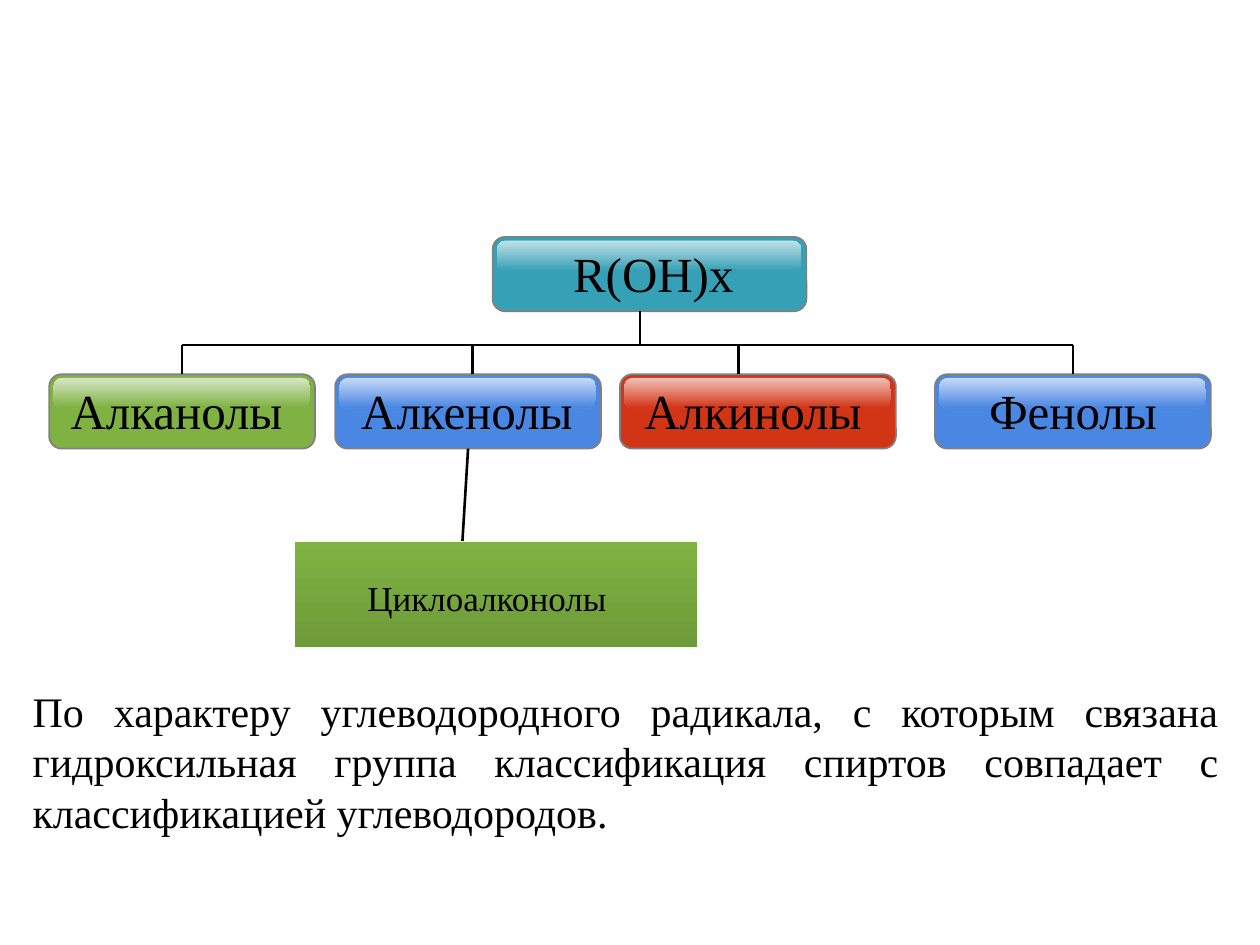
from dataclasses import dataclass

from lxml import etree
from pptx import Presentation, util as u
from pptx.dml.color import RGBColor
from pptx.enum import shapes, text
from pptx.oxml.ns import qn


@dataclass(frozen=True)
class Theme:
    font: str = "Times New Roman"
    node_size: int = 28
    sub_size: int = 20
    body_size: int = 24
    ink: str = "000000"
    white: str = "FFFFFF"
    border: str = "808080"
    teal: str = "36A1B6"
    green: str = "7FB242"
    dark_green: str = "6E9B39"
    blue: str = "4987E3"
    red: str = "D23516"
    gloss_opacity: int = 70


THEME = Theme()
WIDTH, HEIGHT = u.Inches(10), u.Inches(7.5)

# All positions are percent of the slide's width (x) or height (y).
ROOT_TOP, CLASS_TOP, NODE_HEIGHT = 25.07, 39.6, 7.87
BUS_Y, SUB_TOP, SUB_HEIGHT = 36.5, 57.33, 11.2
LABEL_HEIGHT = 7.6

# label, colour, left, width, label left, label width, drop x (None: node centre)
CLASSES = [
    ("Алканолы", THEME.green, 3.9, 21.1, 3.9, 20.2, None),
    ("Алкенолы", THEME.blue, 26.6, 21.1, 27.3, 19.5, 37.5),
    ("Алкинолы", THEME.red, 49.2, 21.9, 49.2, 21.1, 58.6),
    ("Фенолы", THEME.blue, 74.2, 21.9, 75.0, 20.3, None),
]
SUMMARY = ("По характеру углеводородного радикала, с которым связана "
           "гидроксильная группа классификация спиртов совпадает с "
           "классификацией углеводородов.")


def across(share):
    return round(WIDTH * share / 100)


def down(share):
    return round(HEIGHT * share / 100)


def area(left, top, width, height):
    return across(left), down(top), across(width), down(height)


def rgb(value):
    return RGBColor.from_string(value)


def add_block(slide, kind, box, corner=None):
    block = slide.shapes.add_shape(kind, *area(*box))
    block.shadow.inherit = False
    if corner is not None:
        block.adjustments[0] = corner
    return block


def fade_down(block, top_colour, bottom_colour, opacity=None):
    """Fill from top to bottom, with an optional opacity in percent."""
    block.fill.gradient()
    block.fill.gradient_angle = 270
    for stop, colour in zip(block.fill.gradient_stops, (top_colour, bottom_colour)):
        stop.color.rgb = rgb(colour)
    if opacity is not None:
        for colour in block.element.spPr.iter(qn("a:srgbClr")):
            etree.SubElement(colour, qn("a:alpha")).set("val", str(opacity * 1000))


def add_text(slide, content, box, size, align=text.PP_ALIGN.CENTER):
    frame = slide.shapes.add_textbox(*area(*box)).text_frame
    frame.word_wrap = True
    paragraph = frame.paragraphs[0]
    paragraph.alignment = align
    run = paragraph.add_run()
    run.text = content
    run.font.name = THEME.font
    run.font.size = u.Pt(size)
    run.font.color.rgb = rgb(THEME.ink)


def add_node(slide, label, colour, left, top, width, label_left, label_width):
    """Rounded node with a glossy upper band and its label."""
    rounded = shapes.MSO_SHAPE.ROUNDED_RECTANGLE
    node = add_block(slide, rounded, (left, top, width, NODE_HEIGHT), 0.167)
    node.fill.solid()
    node.fill.fore_color.rgb = rgb(colour)
    node.line.color.rgb = rgb(THEME.border)
    node.line.width = u.Pt(1)

    gloss = add_block(slide, rounded, (left + 0.35, top + 0.4, width - 0.75, 3.2), 0.284)
    fade_down(gloss, THEME.white, colour, THEME.gloss_opacity)
    gloss.line.fill.background()

    add_text(slide, label, (label_left, top, label_width, LABEL_HEIGHT), THEME.node_size)
    return node


def add_line(slide, x1, y1, x2, y2):
    line = slide.shapes.add_connector(
        shapes.MSO_CONNECTOR.STRAIGHT, across(x1), down(y1), across(x2), down(y2))
    line.line.color.rgb = rgb(THEME.ink)
    line.line.width = u.Pt(1.5)
    etree.SubElement(line.element.spPr, qn("a:effectLst"))
    return line


def add_classes(slide):
    """Draw the row of classes under its bus and return the nodes by label."""
    nodes, drops = {}, []
    for label, colour, left, width, label_left, label_width, drop_x in CLASSES:
        node = add_node(slide, label, colour, left, CLASS_TOP, width, label_left, label_width)
        x = left + width / 2 if drop_x is None else drop_x
        drop = add_line(slide, x, BUS_Y, x, CLASS_TOP)
        if drop_x is None:
            drop.end_connect(node, 0)
        nodes[label] = node
        drops.append(x)
    add_line(slide, drops[0], BUS_Y, drops[-1], BUS_Y)
    return nodes


def add_subclass(slide, parent):
    branch = add_line(slide, 37.1, CLASS_TOP + NODE_HEIGHT, 36.7, SUB_TOP)
    branch.begin_connect(parent, 2)
    block = add_block(slide, shapes.MSO_SHAPE.RECTANGLE, (23.4, SUB_TOP, 32, SUB_HEIGHT))
    fade_down(block, THEME.green, THEME.dark_green)
    block.line.color.rgb = rgb(THEME.white)
    block.line.width = u.Pt(0.75)
    add_text(slide, "Циклоалконолы", (25, 60.4, 27.3, 5.87), THEME.sub_size)


def main():
    deck = Presentation()
    deck.slide_width, deck.slide_height = WIDTH, HEIGHT
    slide = deck.slides.add_slide(deck.slide_layouts[6])

    add_node(slide, "R(OH)x", THEME.teal, 39.1, ROOT_TOP, 24.9, 39.8, 24.1)
    add_line(slide, 50.8, ROOT_TOP + NODE_HEIGHT, 50.8, BUS_Y)
    nodes = add_classes(slide)
    add_subclass(slide, nodes["Алкенолы"])
    add_text(slide, SUMMARY, (1.6, 71.87, 96.1, 17.47), THEME.body_size,
             text.PP_ALIGN.JUSTIFY)

    deck.save("out.pptx")


if __name__ == "__main__":
    main()
